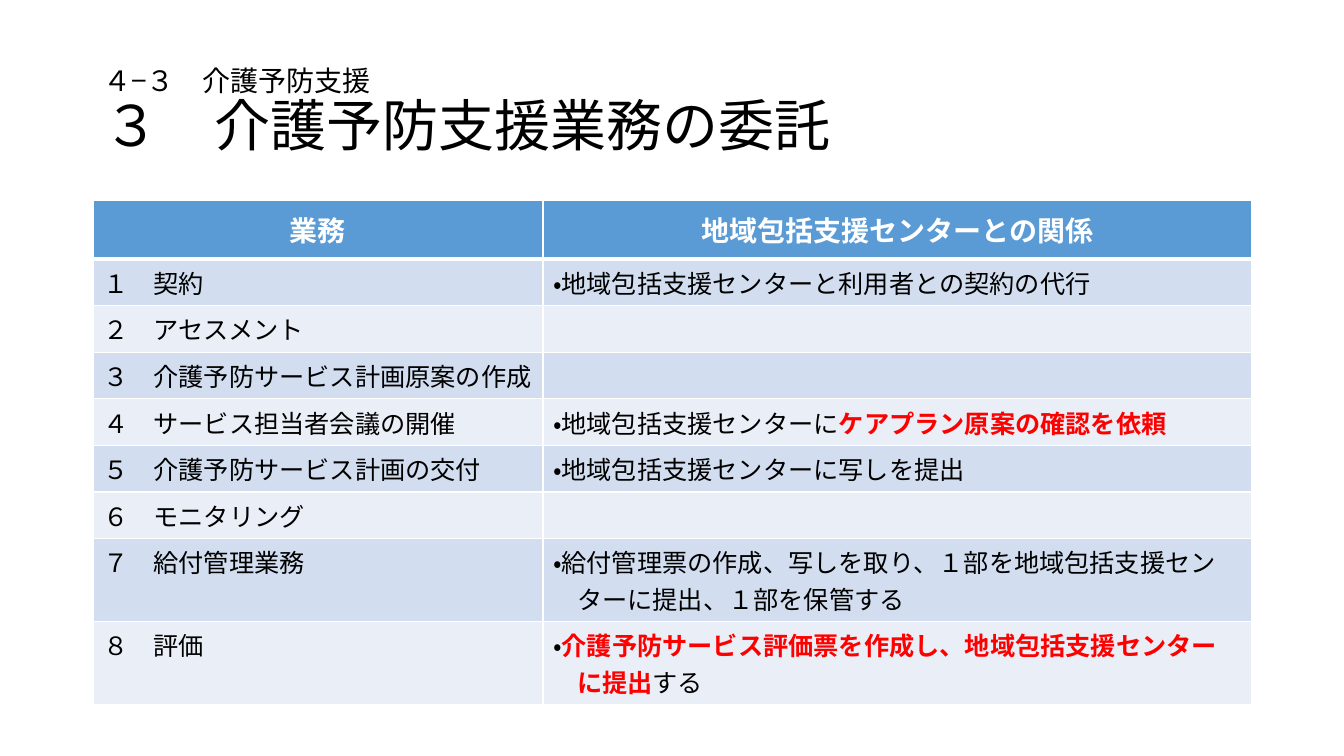
from dataclasses import dataclass

from lxml import etree
from pptx import Presentation
from pptx import util as u
from pptx.dml.color import RGBColor
from pptx.enum import lang, text
from pptx.oxml.ns import qn

EMU_PER_PX = 914400 / 100.8
COLORS = {
    "ink": "000000",
    "white": "FFFFFF",
    "alert": "FF0000",
    "header": "5B9BD5",
    "odd": "D2DEEF",
    "even": "EAEFF7",
}
LEFT, WIDTH = 93, 1159
TASK_WIDTH, RELATION_WIDTH = 450, 709
HEADER_HEIGHT, DUTY_HEIGHT = 59, 41
HANGING = 24


@dataclass(frozen=True)
class Duty:
    task: str
    relation: tuple[str, ...] = ()  # plain and emphasised parts in turn
    hanging: bool = False


DUTIES = (
    Duty("１　契約", ("・地域包括支援センターと利用者との契約の代行",)),
    Duty("２　アセスメント"),
    Duty("３　介護予防サービス計画原案の作成"),
    Duty("４　サービス担当者会議の開催",
         ("・地域包括支援センターに", "ケアプラン原案の確認を依頼")),
    Duty("５　介護予防サービス計画の交付", ("・地域包括支援センターに写しを提出",)),
    Duty("６　モニタリング"),
    Duty("７　給付管理業務",
         ("・給付管理票の作成、写しを取り、１部を地域包括支援センターに提出、１部を保管する",),
         hanging=True),
    Duty("８　評価",
         ("・", "介護予防サービス評価票を作成し、地域包括支援センターに提出", "する"),
         hanging=True),
)


def px(length: int) -> u.Emu:
    return u.Emu(round(length * EMU_PER_PX))


def add_text(paragraph, content: str, *, size: int = 18, color: str = "ink",
             bold: bool = False) -> None:
    run = paragraph.add_run()
    run.text = content
    font = run.font
    font.name = "Calibri"
    font.size = u.Pt(size)
    font.bold = bold
    font.color.rgb = RGBColor.from_string(COLORS[color])
    font.language_id = lang.MSO_LANGUAGE_ID.JAPANESE


def style_cell(cell, fill: str, top: int = 1, bottom: int = 1) -> None:
    """Set the white borders, in points, and then the fill."""
    properties = cell._tc.get_or_add_tcPr()
    for side, points in (("lnL", 1), ("lnR", 1), ("lnT", top), ("lnB", bottom)):
        line = etree.SubElement(properties, qn(f"a:{side}"), w=str(u.Pt(points)))
        solid = etree.SubElement(line, qn("a:solidFill"))
        etree.SubElement(solid, qn("a:srgbClr"), val=COLORS["white"])
    cell.fill.solid()
    cell.fill.fore_color.rgb = RGBColor.from_string(COLORS[fill])


def add_title(slide) -> None:
    title = slide.shapes.title
    title.left, title.top, title.width, title.height = map(px, (LEFT, 40, WIDTH, 146))
    frame = title.text_frame
    frame.auto_size = text.MSO_AUTO_SIZE.NONE
    frame.vertical_anchor = text.MSO_ANCHOR.MIDDLE
    heading = frame.paragraphs[0]
    heading.alignment = text.PP_ALIGN.LEFT
    heading.line_spacing = 0.9
    add_text(heading, "４−３　介護予防支援", size=20)
    heading.add_line_break()
    add_text(heading, "３　介護予防支援業務の委託", size=40)


def add_duties(slide) -> None:
    frame = slide.shapes.add_table(len(DUTIES) + 1, 2, px(LEFT), px(200),
                                   px(WIDTH), px(447))
    table = frame.table
    table.horz_banding = False
    for column, width in zip(table.columns, (TASK_WIDTH, RELATION_WIDTH)):
        column.width = px(width)

    # Header row
    table.rows[0].height = px(HEADER_HEIGHT)
    for column, label in enumerate(("業務", "地域包括支援センターとの関係")):
        cell = table.cell(0, column)
        style_cell(cell, "header", bottom=3)
        cell.vertical_anchor = text.MSO_ANCHOR.MIDDLE
        paragraph = cell.text_frame.paragraphs[0]
        paragraph.alignment = text.PP_ALIGN.CENTER
        add_text(paragraph, label, size=20, color="white", bold=True)

    # One row per duty
    for row, duty in enumerate(DUTIES, start=1):
        table.rows[row].height = px(DUTY_HEIGHT)
        task, relation = table.cell(row, 0), table.cell(row, 1)
        for cell in (task, relation):
            style_cell(cell, "odd" if row % 2 else "even", top=3 if row == 1 else 1)
        add_text(task.text_frame.paragraphs[0], duty.task)
        paragraph = relation.text_frame.paragraphs[0]
        if duty.hanging:
            indents = paragraph._p.get_or_add_pPr()
            indents.set("marL", str(px(HANGING)))
            indents.set("indent", str(px(-HANGING)))
        for index, part in enumerate(duty.relation):
            emphasised = index % 2 == 1
            add_text(paragraph, part, color="alert" if emphasised else "ink",
                     bold=emphasised)


def main() -> None:
    deck = Presentation()
    deck.slide_width, deck.slide_height = px(1344), px(756)
    slide = deck.slides.add_slide(deck.slide_layouts.get_by_name("Title Only"))
    add_title(slide)
    add_duties(slide)
    deck.save("out.pptx")


if __name__ == "__main__":
    main()
